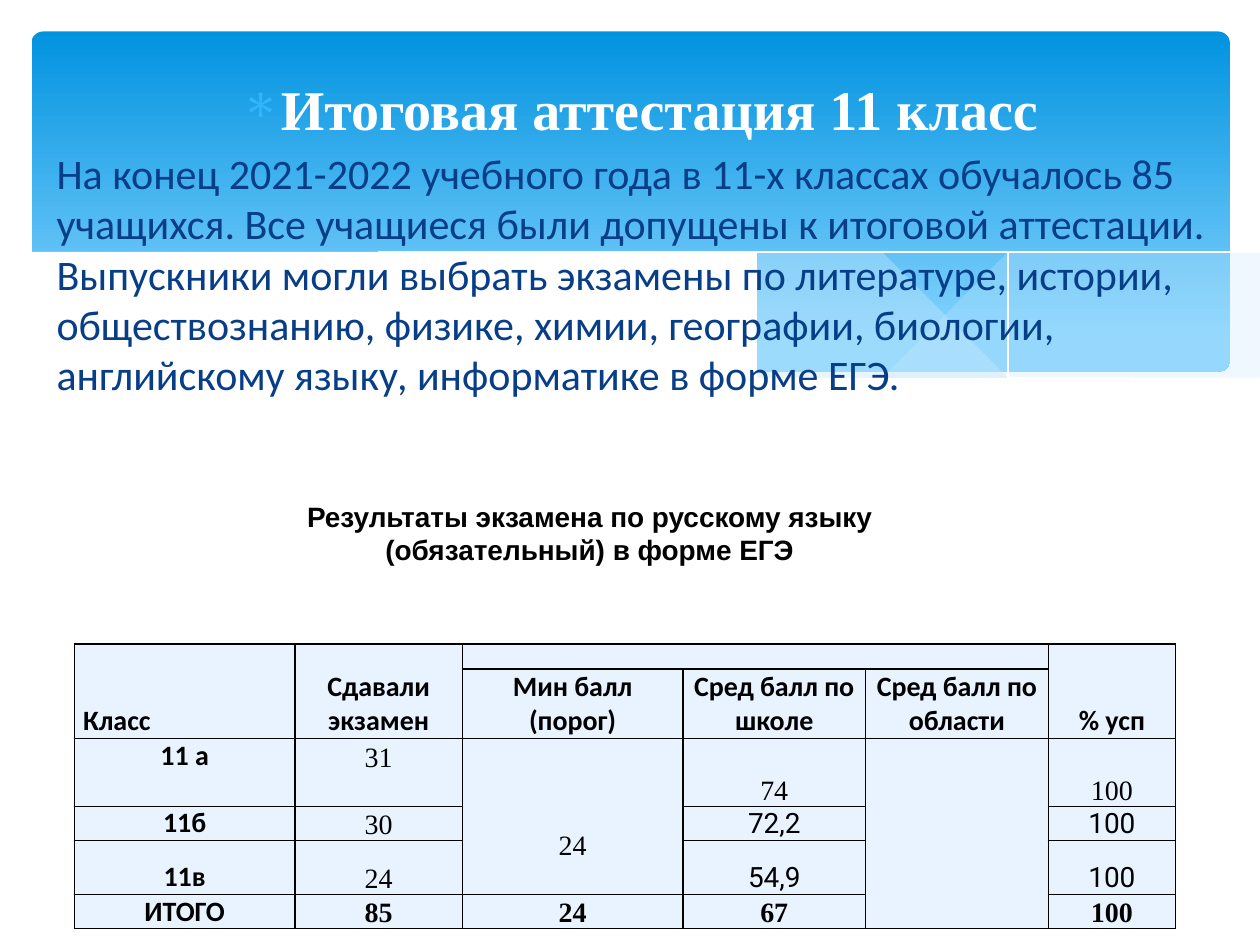
from dataclasses import dataclass
from typing import Optional

from lxml import etree
from pptx import Presentation
from pptx.dml.color import RGBColor
from pptx.enum.shapes import MSO_SHAPE
from pptx.enum.text import MSO_ANCHOR, MSO_AUTO_SIZE, PP_ALIGN
from pptx.oxml.ns import qn
from pptx.util import Inches, Pt

CENTER, LEFT = PP_ALIGN.CENTER, PP_ALIGN.LEFT
TOP, MIDDLE, BOTTOM = MSO_ANCHOR.TOP, MSO_ANCHOR.MIDDLE, MSO_ANCHOR.BOTTOM
ROUNDED = MSO_SHAPE.ROUNDED_RECTANGLE
NO_AUTOFIT = MSO_AUTO_SIZE.NONE
COLORS = {"band_top": "0293E0", "band_bottom": "83D3FE", "wave": "C6E7FC",
          "white": "FFFFFF", "black": "000000", "body": "073E87",
          "bullet": "31B6FD", "cell": "E8F3FF"}
SERIF, SANS = "Times New Roman", "Calibri"
Point = tuple[float, float]


@dataclass
class Wave:
    curves: list[list[Point]]
    fill: Optional[str] = None
    opacity: int = 100


@dataclass
class Entry:
    row: int
    column: int
    text: str
    font: str = SANS
    bold: bool = True
    align: PP_ALIGN = CENTER
    anchor: MSO_ANCHOR = BOTTOM
    top: float = 0
    bottom: float = 0


WAVES = [
    Wave([[(9.76, 2), (9.35, 2.07), (8.91, 2.16), (8.32, 2.3), (7.53, 2.48),
           (6.61, 2.65)],
          [(6.61, 2.65), (7.05, 2.71), (7.57, 2.76), (8.03, 2.78), (8.54, 2.76),
           (8.97, 2.7), (9.35, 2.62), (9.76, 2.47)]], "wave", 29),
    Wave([[(8.93, 2.73), (8.37, 2.65), (7.75, 2.54), (7.06, 2.4), (6.29, 2.22),
           (5.69, 2.08), (5.14, 1.98), (4.65, 1.91), (4.2, 1.87), (3.8, 1.85),
           (3.28, 1.87), (2.86, 1.91)],
          [(2.86, 1.91), (3.42, 1.99), (4.04, 2.11), (4.49, 2.22), (5.3, 2.4),
           (6.01, 2.55), (6.65, 2.66), (7.22, 2.74), (7.73, 2.77), (8.18, 2.78),
           (8.57, 2.77), (8.93, 2.73)]], "wave", 40),
    Wave([[(3.09, 1.95), (3.53, 1.89), (4.01, 1.87), (4.5, 1.88), (5.1, 1.92),
           (5.82, 2), (6.65, 2.13), (7.6, 2.33), (8.31, 2.51), (9.07, 2.72)]]),
    Wave([[(6.13, 2.57), (6.72, 2.41), (7.48, 2.23), (8.06, 2.1), (8.66, 1.99),
           (9.24, 1.9), (9.75, 1.85)]]),
    Wave([[(9.77, 2.46), (9.3, 2.62), (8.75, 2.73), (8.09, 2.77), (7.44, 2.74),
           (6.68, 2.65), (6.03, 2.54), (5.29, 2.39), (4.47, 2.2), (3.91, 2.07),
           (3.4, 1.97), (2.92, 1.9), (2.5, 1.86), (1.93, 1.84), (1.46, 1.85),
           (1.06, 1.89), (0.67, 1.97), (0.4, 2.05), (0.23, 2.13)],
          [(0.23, 3.29), (9.77, 3.29)]], "white"),
]

COLUMN_WIDTHS = [1.75, 1.33, 1.75, 1.45, 1.45, 1.01]
ROW_HEIGHTS = [0.2, 0.55, 0.54, 0.27, 0.43, 0.27]
MERGES = [(0, 0, 1, 0), (0, 1, 1, 1), (0, 2, 0, 4), (0, 5, 1, 5),
          (2, 2, 4, 2), (2, 4, 5, 4)]
ENTRIES = [
    Entry(0, 0, "Класс", align=LEFT),
    Entry(0, 1, "Сдавали экзамен"),
    Entry(0, 5, "% усп"),
    Entry(1, 2, "Мин балл (порог)"),
    Entry(1, 3, "Сред балл по школе"),
    Entry(1, 4, "Сред балл по области"),
    Entry(2, 0, "11 а", anchor=TOP),
    Entry(2, 1, "31", SERIF, False, anchor=TOP, top=0.03),
    Entry(2, 2, "24", SERIF, False, bottom=0.26),
    Entry(2, 3, "74", SERIF, False),
    Entry(2, 5, "100", SERIF, False),
    Entry(3, 0, "11б"),
    Entry(3, 1, "30", SERIF, False),
    Entry(3, 3, "72,2", "Roboto", False),
    Entry(3, 5, "100", "Roboto", False),
    Entry(4, 0, "11в"),
    Entry(4, 1, "24", SERIF, False),
    Entry(4, 3, "54,9", "Roboto", False),
    Entry(4, 5, "100", "Roboto", False),
    Entry(5, 0, "ИТОГО"),
    Entry(5, 1, "85", SERIF),
    Entry(5, 2, "24", SERIF),
    Entry(5, 3, "67", SERIF),
    Entry(5, 5, "100", SERIF),
]


def color(name: str) -> RGBColor:
    return RGBColor.from_string(COLORS[name])


def format_para(para, font: str, size: float, tint: str, bold: bool,
                align: PP_ALIGN = CENTER) -> None:
    para.alignment = align
    for span in para.runs:
        span.font.name = font
        span.font.size = Pt(size)
        span.font.bold = bold
        span.font.color.rgb = color(tint)


def smooth_curve(knots: list[Point], steps: int = 5) -> list[Point]:
    if len(knots) < 3:
        return knots
    padded = [knots[0], *knots, knots[-1]]
    points = [knots[0]]
    for a, b, c, d in zip(padded, padded[1:], padded[2:], padded[3:]):
        for step in range(1, steps + 1):
            t = step / steps
            points.append(tuple(
                (2 * q + (r - p) * t + (2 * p - 5 * q + 4 * r - s) * t ** 2
                 + (3 * q - p - 3 * r + s) * t ** 3) / 2
                for p, q, r, s in zip(a, b, c, d)))
    return points


def draw_band(page) -> None:
    band = page.shapes.add_shape(ROUNDED, Inches(0.25), Inches(0.25),
                                 Inches(9.51), Inches(2.7))
    band.adjustments[0] = 0.034
    band.shadow.inherit = False
    band.line.fill.background()
    band.fill.gradient()
    band.fill.gradient_angle = 270
    stops = zip(band.fill.gradient_stops, ("band_top", "band_bottom"), (0, 0.9))
    for stop, tint, position in stops:
        stop.color.rgb = color(tint)
        stop.position = position


def draw_wave(page, wave: Wave) -> None:
    points = [point for curve in wave.curves for point in smooth_curve(curve)]
    builder = page.shapes.build_freeform(*points[0], scale=Inches(1))
    builder.add_line_segments(points[1:], close=wave.fill is not None)
    shape = builder.convert_to_shape()
    shape.shadow.inherit = False
    if wave.fill is None:
        shape.fill.background()
        shape.line.color.rgb = color("white")
        shape.line.width = Pt(0)
        return
    shape.line.fill.background()
    shape.fill.solid()
    shape.fill.fore_color.rgb = color(wave.fill)
    if wave.opacity < 100:
        tint = shape.element.spPr.find(".//" + qn("a:srgbClr"))
        etree.SubElement(tint, qn("a:alpha"), val=str(wave.opacity * 1000))


def write_title(page) -> None:
    title = page.shapes.title
    page.shapes.element.append(title.element)
    title.left, title.top = Inches(0.35), Inches(0.54)
    title.width, title.height = Inches(9.45), Inches(0.61)
    frame = title.text_frame
    frame.text = "Итоговая аттестация 11 класс"
    frame.auto_size = NO_AUTOFIT
    frame.vertical_anchor = TOP
    para = frame.paragraphs[0]
    para.space_before = Pt(0)
    format_para(para, SERIF, 32, "white", True)
    props = para._p.get_or_add_pPr()
    props.set("marL", str(Inches(0.3)))
    props.set("indent", str(Inches(-0.3)))
    tint = etree.SubElement(props, qn("a:buClr"))
    etree.SubElement(tint, qn("a:srgbClr"), val=COLORS["bullet"])
    etree.SubElement(props, qn("a:buChar"), char="∗")


def add_text(page, left: float, top: float, width: float, height: float,
             text: str):
    box = page.shapes.add_textbox(Inches(left), Inches(top),
                                  Inches(width), Inches(height))
    box.text_frame.text = text
    return box.text_frame


def format_cell(cell) -> None:
    cell.margin_left = cell.margin_right = Inches(0.07)
    cell.margin_top = cell.margin_bottom = 0
    props = cell._tc.get_or_add_tcPr()
    for side in ("lnL", "lnR", "lnT", "lnB"):
        border = etree.SubElement(props, qn(f"a:{side}"), w=str(Pt(1)))
        fill = etree.SubElement(border, qn("a:solidFill"))
        etree.SubElement(fill, qn("a:srgbClr"), val=COLORS["black"])
    cell.fill.solid()
    cell.fill.fore_color.rgb = color("cell")


def draw_table(page) -> None:
    table = page.shapes.add_table(
        len(ROW_HEIGHTS), len(COLUMN_WIDTHS), Inches(0.59), Inches(5.11),
        Inches(sum(COLUMN_WIDTHS)), Inches(sum(ROW_HEIGHTS))).table
    for column, width in zip(table.columns, COLUMN_WIDTHS):
        column.width = Inches(width)
    for row, height in zip(table.rows, ROW_HEIGHTS):
        row.height = Inches(height)
    for cell in table.iter_cells():
        format_cell(cell)
    for top, left, bottom, right in MERGES:
        table.cell(top, left).merge(table.cell(bottom, right))
    for entry in ENTRIES:
        cell = table.cell(entry.row, entry.column)
        cell.text_frame.text = entry.text
        cell.vertical_anchor = entry.anchor
        cell.margin_top = Inches(entry.top)
        cell.margin_bottom = Inches(entry.bottom)
        format_para(cell.text_frame.paragraphs[0], entry.font, 16, "black",
                    entry.bold, entry.align)
    for cell in table.iter_cells():
        if not cell.text_frame.text:
            para = cell.text_frame.paragraphs[0]
            etree.SubElement(para._p, qn("a:endParaRPr"), sz="1000")


def main() -> None:
    deck = Presentation()
    deck.slide_width, deck.slide_height = Inches(10), Inches(7.5)
    page = deck.slides.add_slide(deck.slide_layouts[5])
    draw_band(page)
    for wave in WAVES:
        draw_wave(page, wave)
    write_title(page)
    body = add_text(page, 0.35, 1.12, 9.45, 2.13,
                    "На конец 2021-2022 учебного года в 11-х классах обучалось "
                    "85 учащихся. Все учащиеся были допущены к итоговой "
                    "аттестации. Выпускники могли выбрать экзамены по "
                    "литературе, истории, обществознанию, физике, химии, "
                    "географии, биологии, английскому языку, информатике в "
                    "форме ЕГЭ.")
    body.word_wrap = True
    format_para(body.paragraphs[0], SANS, 24, "body", False, LEFT)
    caption = add_text(page, 1.93, 3.91, 5.12, 0.64,
                       "Результаты экзамена по русскому языку\n"
                       "(обязательный) в форме ЕГЭ")
    caption.word_wrap = False
    caption.vertical_anchor = MIDDLE
    for para in caption.paragraphs:
        format_para(para, "Arial", 16, "black", True)
        para._p.get_or_add_pPr().set("indent", str(Inches(0.38)))
    draw_table(page)
    deck.save("out.pptx")


if __name__ == "__main__":
    main()
